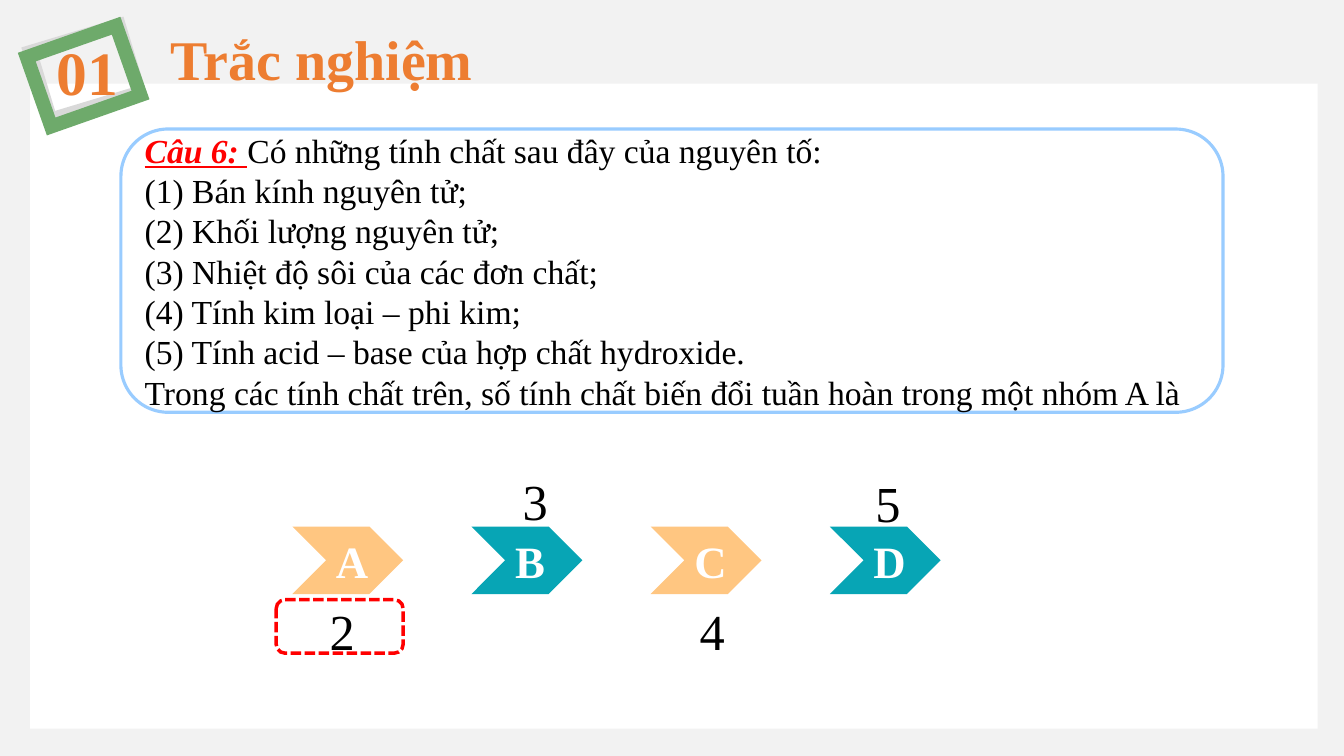
from dataclasses import dataclass

from lxml.etree import SubElement
from pptx import Presentation
from pptx.dml.color import RGBColor
from pptx.enum.dml import MSO_LINE
from pptx.enum.shapes import MSO_SHAPE
from pptx.enum.text import MSO_ANCHOR, MSO_AUTO_SIZE, PP_ALIGN
from pptx.oxml.ns import qn
from pptx.util import Inches, Pt


@dataclass(frozen=True)
class Theme:
    font: str = "Times New Roman"
    backdrop: str = "F2F2F2"
    white: str = "FFFFFF"
    black: str = "000000"
    orange: str = "ED7D31"
    grey: str = "D9D9D9"
    green: str = "6EAA6B"
    sky: str = "99CCFF"
    red: str = "FF0000"
    peach: str = "FFC681"
    teal: str = "07A5B5"
    body_size: int = 24
    letter_size: int = 32
    answer_size: int = 36
    title_size: int = 40
    number_size: int = 44


class QuizPage:
    """Draws on one slide; every place is (left, top, width, height) in percent of the slide."""

    def __init__(self, deck, theme):
        self.deck, self.theme = deck, theme
        self.page = deck.slides.add_slide(deck.slide_layouts[5])
        background = self.page.background.fill
        background.solid()
        background.fore_color.rgb = RGBColor.from_string(theme.backdrop)

    def lengths(self, place):
        width, height = self.deck.slide_width, self.deck.slide_height
        return [round(share * side / 100) for share, side in zip(place, (width, height) * 2)]

    def style(self, font, size, color, bold=False):
        font.name, font.size, font.bold = self.theme.font, Pt(size), bold
        font.color.rgb = RGBColor.from_string(color)

    def set_text(self, shape, text, size, color, bold=False, align=PP_ALIGN.LEFT,
                 anchor=MSO_ANCHOR.TOP, wrap=True):
        frame = shape.text_frame
        frame.text = text
        frame.word_wrap, frame.vertical_anchor = wrap, anchor
        frame.auto_size = MSO_AUTO_SIZE.NONE
        for para in frame.paragraphs:
            para.alignment = align
            self.style(para.font, size, color, bold)
        return frame

    def title(self, place, text):
        """Fill the title placeholder and bring it in front of the panel."""
        box = self.page.shapes.title
        box.left, box.top, box.width, box.height = self.lengths(place)
        self.set_text(box, text, self.theme.title_size, self.theme.orange, bold=True, wrap=False)
        self.page.shapes.element.append(box.element)

    def label(self, place, text, size, color, **options):
        box = self.page.shapes.add_textbox(*self.lengths(place))
        self.set_text(box, text, size, color, **options)

    def shape(self, kind, place, fill=None, line=None, weight=1, dash=None, turn=0):
        shape = self.page.shapes.add_shape(kind, *self.lengths(place))
        shape.shadow.inherit = False
        shape.rotation = turn
        if fill:
            shape.fill.solid()
            shape.fill.fore_color.rgb = RGBColor.from_string(fill)
        else:
            shape.fill.background()
        if line:
            shape.line.color.rgb = RGBColor.from_string(line)
            shape.line.width = Pt(weight)
            if dash:
                shape.line.dash_style = dash
            SubElement(shape.element.spPr.find(qn("a:ln")), qn("a:miter"), lim="800000")
        else:
            shape.line.fill.background()
        return shape

    def question(self, place, lead, lines):
        theme = self.theme
        box = self.shape(MSO_SHAPE.ROUNDED_RECTANGLE, place, theme.white, theme.sky, 2.25)
        frame = self.set_text(box, "\n".join(lines), theme.body_size, theme.black,
                              anchor=MSO_ANCHOR.MIDDLE)
        opening = frame.paragraphs[0]
        opening.text = ""
        span = opening.add_run()
        span.text = lead
        self.style(span.font, theme.body_size, theme.red, bold=True)
        span.font.italic = span.font.underline = True
        opening.add_run().text = lines[0]

    def choice(self, place, letter, fill):
        chevron = self.shape(MSO_SHAPE.CHEVRON, place, fill)
        self.set_text(chevron, letter, self.theme.letter_size, self.theme.white, bold=True,
                      align=PP_ALIGN.CENTER, anchor=MSO_ANCHOR.MIDDLE)


QUESTION = [
    "Có những tính chất sau đây của nguyên tố:",
    "(1) Bán kính nguyên tử;",
    "(2) Khối lượng nguyên tử;",
    "(3) Nhiệt độ sôi của các đơn chất;",
    "(4) Tính kim loại – phi kim;",
    "(5) Tính acid – base của hợp chất hydroxide.",
    "Trong các tính chất trên, số tính chất biến đổi tuần hoàn trong một nhóm A là",
]
ANSWERS = {
    "2": (20.55, 78.67, 9.82, 9.47),
    "3": (35.1, 61.47, 9.45, 9.47),
    "4": (48.68, 78.67, 8.63, 9.47),
    "5": (61.35, 61.73, 9.45, 9.47),
}


def main():
    deck = Presentation()
    deck.slide_width, deck.slide_height = Inches(13.33), Inches(7.5)
    theme = Theme()
    quiz = QuizPage(deck, theme)

    quiz.shape(MSO_SHAPE.RECTANGLE, (2.25, 11.07, 95.8, 85.33), theme.white)
    quiz.shape(MSO_SHAPE.RECTANGLE, (2.85, 4.93, 6.9, 9.33), line=theme.grey, weight=10, turn=343.2)
    quiz.shape(MSO_SHAPE.RECTANGLE, (2.7, 5.2, 7.05, 9.73), line=theme.green, weight=10, turn=340.6)
    quiz.title((11.93, 2.53, 24.23, 10.27), "Trắc nghiệm")
    quiz.label((3.45, 3.87, 6.15, 11.2), "01", theme.number_size, theme.orange,
               bold=True, wrap=False)
    quiz.question((9, 17.07, 82, 37.47), "Câu 6: ", QUESTION)

    for answer, place in ANSWERS.items():
        quiz.label(place, answer, theme.answer_size, theme.black, align=PP_ALIGN.CENTER)
    quiz.shape(MSO_SHAPE.ROUNDED_RECTANGLE, (20.55, 79.33, 9.45, 7.07), line=theme.red,
               weight=2.5, dash=MSO_LINE.SQUARE_DOT)
    for index, letter in enumerate("ABCD"):
        fill = (theme.peach, theme.teal)[index % 2]
        quiz.choice((21.75 + 13.33 * index, 69.65, 8.25, 8.93), letter, fill)

    deck.save("out.pptx")


if __name__ == "__main__":
    main()
